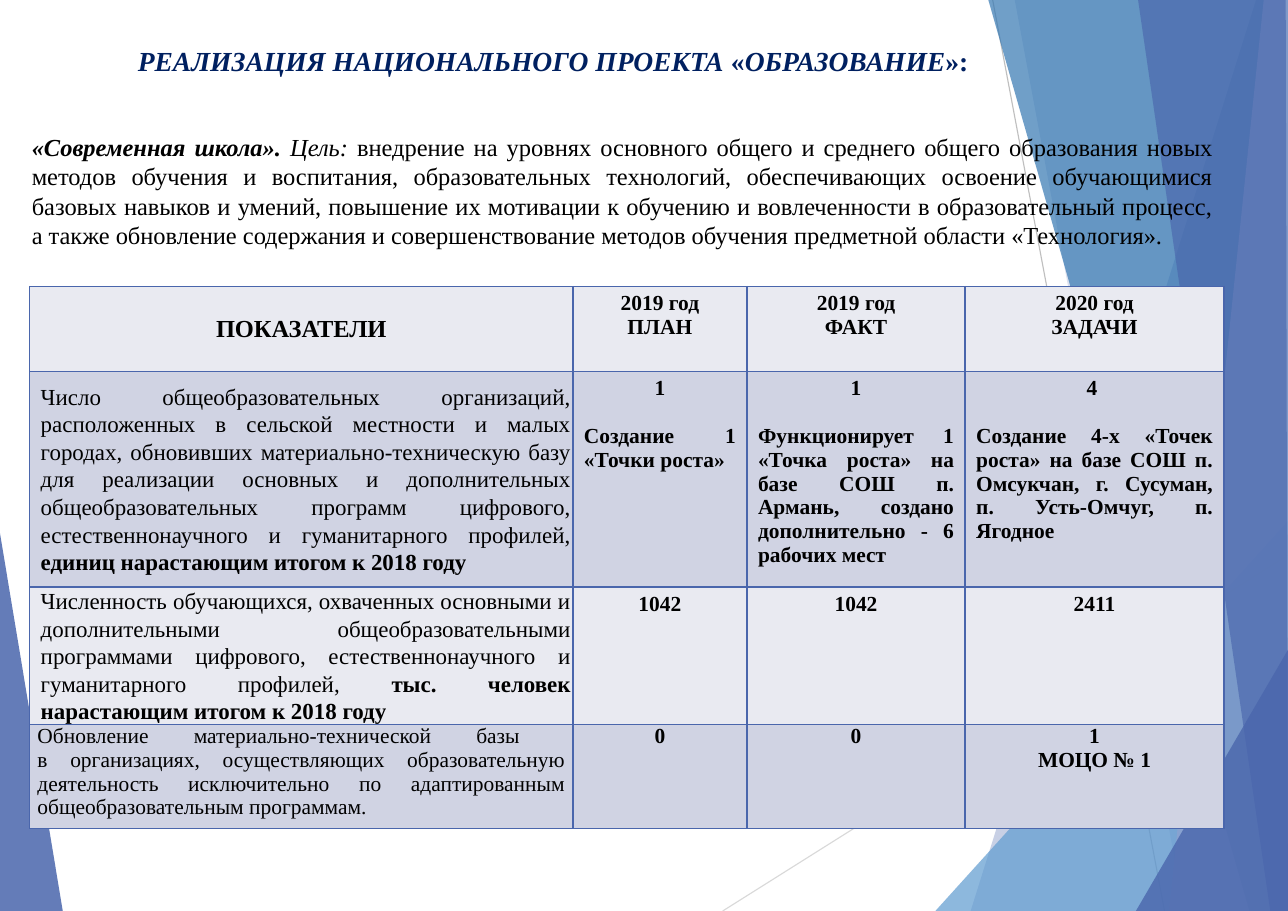
"""Build the slide on the national project "Education": goal and table of targets."""
import lxml.etree
import pptx
import pptx.dml.color
import pptx.enum.shapes
import pptx.enum.text
import pptx.oxml.ns
import pptx.util

PX = 9144
WIDE, HIGH = 1169, 827
FONT = "Times New Roman"
COLORS = {
    "ink": "000000", "navy": "002060", "blue": "4A66AC", "sky": "629DD1",
    "teal": "3477B2", "haze": "90A2CF", "pale": "E9EAF1", "band": "D0D3E3",
    "gray": "BFBFBF", "light": "D9D9D9",
}
ALIGN = pptx.enum.text.PP_ALIGN
MIDDLE = pptx.enum.text.MSO_ANCHOR.MIDDLE
qn = pptx.oxml.ns.qn


def rgb(name):
    return pptx.dml.color.RGBColor.from_string(COLORS[name])


def write(para, bits, size, align, color="ink"):
    para.alignment = align
    for text, look in bits:
        if text == "\v":
            para.add_line_break()
            continue
        run = para.add_run()
        run.text = text
        font = run.font
        font.name, font.size = FONT, pptx.util.Pt(size)
        font.bold, font.italic = "b" in look, "i" in look
        font.color.rgb = rgb(color)


deck = pptx.Presentation()
deck.slide_width, deck.slide_height = WIDE * PX, HIGH * PX
slide = deck.slides.add_slide(deck.slide_layouts[6])
shapes = slide.shapes

lines = [
    (656, HIGH, WIDE, 504, "light"),
    (901, 0, 1057, HIGH, "gray"),
]
facets = [
    ([(0, 484), (57, HIGH), (0, HIGH)], "blue", 85),
    ([(1140, 0), (881, HIGH), (WIDE, HIGH), (WIDE, 0)], "blue", 30),
    ([(921, 0), (1075, HIGH), (WIDE, HIGH), (WIDE, 0)], "blue", 20),
    ([(849, HIGH), (WIDE, 473), (WIDE, HIGH)], "sky", 72),
    ([(897, 0), (1134, HIGH), (WIDE, HIGH), (WIDE, 0)], "teal", 70),
    ([(1147, 0), (1061, HIGH), (WIDE, HIGH), (WIDE, 0)], "haze", 70),
    ([(1033, 0), (1153, HIGH), (WIDE, HIGH), (1167, 0)], "blue", 65),
    ([(1031, HIGH), (WIDE, 590), (WIDE, HIGH)], "blue", 80),
]

for index, (points, color, alpha) in enumerate(facets):
    pen = shapes.build_freeform(*points[0], scale=PX)
    pen.add_line_segments(points[1:], close=True)
    facet = pen.convert_to_shape()
    facet.shadow.inherit = False
    facet.line.fill.background()
    facet.fill.solid()
    facet.fill.fore_color.rgb = rgb(color)
    tint = facet._element.spPr.find(qn("a:solidFill"))[0]
    lxml.etree.SubElement(tint, qn("a:alpha"), val=str(alpha * 1000))
    if index == 0:
        for left, top, right, low, shade in lines:
            line = shapes.add_connector(
                pptx.enum.shapes.MSO_CONNECTOR.STRAIGHT,
                left * PX, top * PX, right * PX, low * PX)
            line.line.color.rgb = rgb(shade)
            line.line.width = pptx.util.Pt(0.75)
            lxml.etree.SubElement(line._element.spPr, qn("a:effectLst"))

title = [
    ("РЕАЛИЗАЦИЯ НАЦИОНАЛЬНОГО ПРОЕКТА ", "bi"), ("«", "b"),
    ("ОБРАЗОВАНИЕ", "bi"), ("»:", "b"),
]
goal = [
    ("«Современная школа». ", "bi"), ("Цель: ", "i"),
    ("внедрение на уровнях основного общего и среднего общего образования новых "
     "методов обучения и воспитания, образовательных технологий, обеспечивающих "
     "освоение обучающимися базовых навыков и умений, повышение их мотивации к "
     "обучению и вовлеченности в образовательный процесс, а также обновление "
     "содержания и совершенствование методов обучения предметной области "
     "«Технология».", ""),
]
boxes = [
    ((97, 35, 810, 40), title, 18, ALIGN.CENTER, "navy"),
    ((19, 115, 1092, 118), goal, 16, ALIGN.JUSTIFY, "ink"),
]
for place, bits, size, align, color in boxes:
    box = shapes.add_textbox(*(side * PX for side in place))
    box.text_frame.word_wrap = True
    write(box.text_frame.paragraphs[0], bits, size, align, color)

labels = [
    [("ПОКАЗАТЕЛИ", "b")],
    [("Число общеобразовательных организаций, расположенных в сельской местности и "
      "малых городах, обновивших материально-техническую базу для реализации "
      "основных и дополнительных общеобразовательных программ цифрового, "
      "естественнонаучного и гуманитарного профилей, ", ""),
     ("единиц нарастающим итогом к 2018 году", "b")],
    [("Численность обучающихся, охваченных основными и дополнительными "
      "общеобразовательными программами цифрового, естественнонаучного и "
      "гуманитарного профилей, ", ""),
     ("тыс. человек нарастающим итогом к 2018 году", "b")],
    [("Обновление материально-технической базы ", ""), ("\v", ""),
     ("в организациях, осуществляющих образовательную деятельность исключительно "
      "по адаптированным общеобразовательным программам. ", "")],
]
values = [
    [["2019 год", "ПЛАН"], ["2019 год", "ФАКТ"], ["2020 год", "ЗАДАЧИ"]],
    [["1", "Создание 1 «Точки роста»"],
     ["1", "Функционирует 1 «Точка роста» на базе СОШ п. Армань, создано "
           "дополнительно - 6 рабочих мест"],
     ["4 ", "Создание 4-х «Точек роста» на базе СОШ п. Омсукчан, г. Сусуман, "
            "п. Усть-Омчуг, п. Ягодное"]],
    [["1042"], ["1042"], ["2411"]],
    [["0"], ["0"], ["1", "МОЦО № 1"]],
]
widths = [493, 158, 198, 235]
heights = [77, 196, 125, 94]
sizes = [16, 15, 15, 14]

table = shapes.add_table(
    len(heights), len(widths), 27 * PX, 260 * PX,
    sum(widths) * PX, sum(heights) * PX).table
table.first_row = table.horz_banding = False
for column, width in zip(table.columns, widths):
    column.width = width * PX

for row, height in enumerate(heights):
    table.rows[row].height = height * PX
    for col in range(len(widths)):
        cell = table.cell(row, col)
        props = cell._tc.get_or_add_tcPr()
        for side in ("lnL", "lnR", "lnT", "lnB"):
            edge = lxml.etree.SubElement(props, qn("a:" + side), w="12700")
            paint = lxml.etree.SubElement(edge, qn("a:solidFill"))
            lxml.etree.SubElement(paint, qn("a:srgbClr"), val=COLORS["blue"])
        cell.fill.solid()
        cell.fill.fore_color.rgb = rgb("band" if row % 2 else "pale")
        if row == 3:
            cell.margin_left = cell.margin_right = 7 * PX
            cell.margin_top = cell.margin_bottom = 0
        frame = cell.text_frame
        para = frame.paragraphs[0]
        if col == 0:
            write(para, labels[row], sizes[row], ALIGN.JUSTIFY if row else ALIGN.CENTER)
            if row < 3:
                cell.vertical_anchor = MIDDLE
            if row in (1, 2):
                cell.margin_left = cell.margin_right = 2 * PX
                cell.margin_top = cell.margin_bottom = 0
                para.line_spacing = pptx.util.Pt(18)
                para._p.get_or_add_pPr().set("marL", str(8 * PX))
            continue
        for index, text in enumerate(values[row][col - 1]):
            para = frame.add_paragraph() if index else para
            detail = row == 1 and index == 1
            write(para, [(text, "b")], 14, ALIGN.JUSTIFY if detail else ALIGN.CENTER)
            if detail:
                para.space_before = pptx.util.Pt(16)

deck.save("out.pptx")
